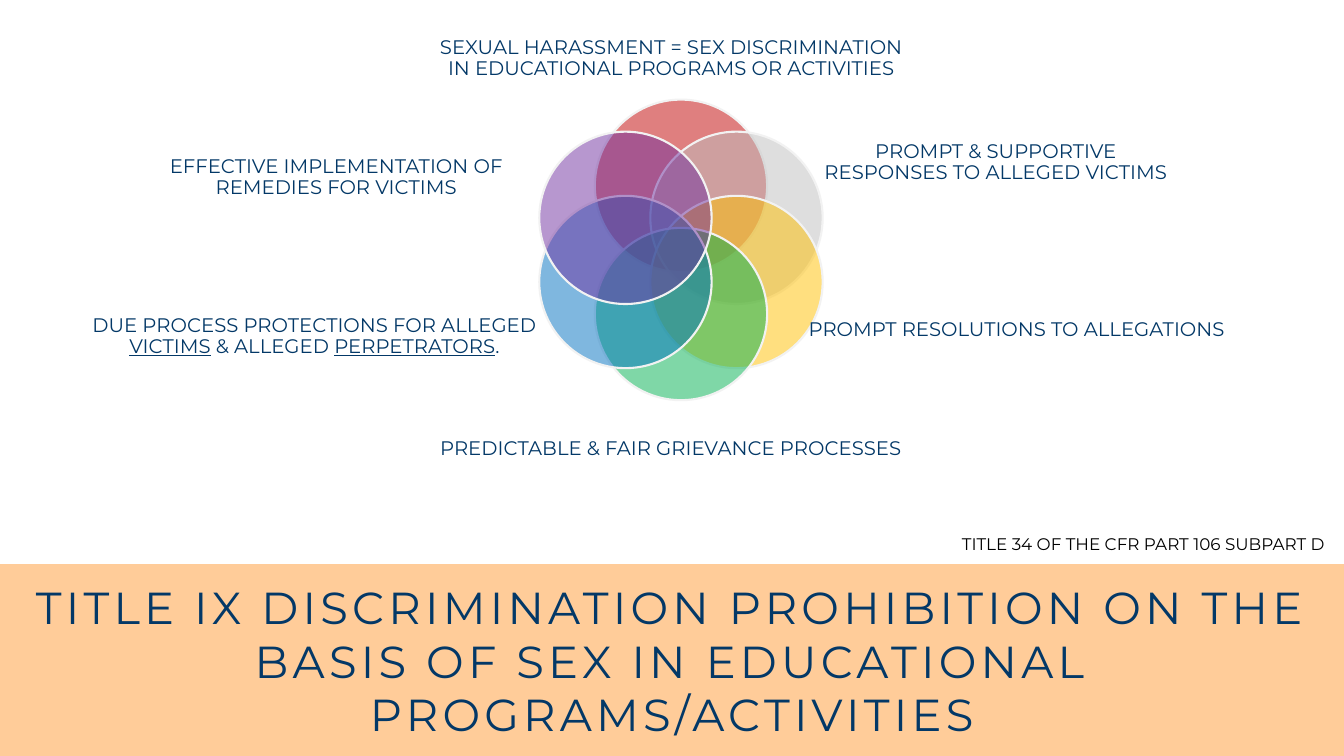
"""Build the Title IX slide: six overlapping circles with labels above a title band."""
import math

import pptx
import pptx.dml.color
import pptx.enum.shapes
import pptx.enum.text
import pptx.oxml
import pptx.oxml.ns
import pptx.util

Pt = pptx.util.Pt
SHAPE = pptx.enum.shapes.MSO_SHAPE

FONT = "Montserrat"
NAVY = "033867"
TITLE = "TITLE IX DISCRIMINATION PROHIBITION ON THE BASIS OF SEX IN EDUCATIONAL PROGRAMS/ACTIVITIES"
CITATION = "TITLE 34 OF THE CFR PART 106 SUBPART D"
PETALS = [
    ("C00000", (306.7, 0, 345.6, 83.5),
     [("SEXUAL HARASSMENT = SEX DISCRIMINATION IN EDUCATIONAL PROGRAMS OR ACTIVITIES", False)]),
    ("BFBFBF", (587.5, 70.5, 247.7, 91.4),
     [("PROMPT & SUPPORTIVE RESPONSES TO ALLEGED VICTIMS", False)]),
    ("FFC000", (576.3, 185, 299.9, 102.2),
     [("PROMPT RESOLUTIONS TO ALLEGATIONS", False)]),
    ("00B050", (310, 279.4, 338.4, 83.5),
     [("PREDICTABLE & FAIR GRIEVANCE PROCESSES", False)]),
    ("0070C0", (61.9, 189.4, 325.4, 102.2),
     [("DUE PROCESS PROTECTIONS FOR ALLEGED ", False), ("VICTIMS", True),
      (" & ALLEGED ", False), ("PERPETRATORS", True), (".", False)]),
    ("7030A0", (117.4, 75.6, 245.5, 102.2),
     [("EFFECTIVE IMPLEMENTATION OF REMEDIES FOR VICTIMS", False)]),
]
CENTER_X, CENTER_Y, RING, DIAMETER = 486.4, 178.5, 45.8, 123.1


def rgb(value):
    return pptx.dml.color.RGBColor.from_string(value)


def add_solid(s, kind, box, color):
    sp = s.shapes.add_shape(kind, *map(Pt, box))
    sp.shadow.inherit = False
    sp.fill.solid()
    sp.fill.fore_color.rgb = rgb(color)
    sp.line.fill.background()
    return sp


def add_circle(s, index, color):
    angle = math.radians(60 * index - 90)
    left = CENTER_X + RING * math.cos(angle) - DIAMETER / 2
    top = CENTER_Y + RING * math.sin(angle) - DIAMETER / 2
    sp = add_solid(s, SHAPE.OVAL, (left, top, DIAMETER, DIAMETER), color)
    sp.line.color.rgb = rgb("F2F2F2")
    sp.line.width = Pt(1.5)
    clr = sp.fill._xPr.find(pptx.oxml.ns.qn("a:solidFill"))[0]
    alpha = pptx.oxml.parse_xml(f'<a:alpha {pptx.oxml.ns.nsdecls("a")} val="50000"/>')
    clr.append(alpha)


def write(sp, runs, size, color, spacing=None, tracking=0, margin=None):
    tf = sp.text_frame
    tf.word_wrap = True
    tf.vertical_anchor = pptx.enum.text.MSO_ANCHOR.MIDDLE
    if margin is not None:
        tf.margin_left = tf.margin_right = tf.margin_top = tf.margin_bottom = Pt(margin)
    p = tf.paragraphs[0]
    p.alignment = pptx.enum.text.PP_ALIGN.CENTER
    if spacing:
        p.line_spacing = spacing
    for text, underlined in runs:
        r = p.add_run()
        r.text = text
        r.font.name = FONT
        r.font.size = Pt(size)
        r.font.color.rgb = rgb(color)
        if underlined:
            r.font.underline = True
        if tracking:
            r.font._rPr.set("spc", str(tracking * 100))


def main():
    prs = pptx.Presentation()
    prs.slide_width, prs.slide_height = Pt(960), Pt(540)
    s = prs.slides.add_slide(prs.slide_layouts[6])

    for index, (color, box, runs) in enumerate(PETALS):
        add_circle(s, index, color)
        label = s.shapes.add_textbox(*map(Pt, box))
        write(label, runs, 14, NAVY, spacing=0.9, margin=0)

    band = add_solid(s, SHAPE.RECTANGLE, (0, 403, 960, 137), "FFCC99")
    write(band, [(TITLE, False)], 32, NAVY, tracking=3)

    citation = s.shapes.add_textbox(Pt(673.4), Pt(377.6), Pt(286.6), Pt(21.8))
    write(citation, [(CITATION, False)], 12, "000000")
    citation.text_frame.auto_size = pptx.enum.text.MSO_AUTO_SIZE.SHAPE_TO_FIT_TEXT

    prs.save("out.pptx")


if __name__ == "__main__":
    main()
